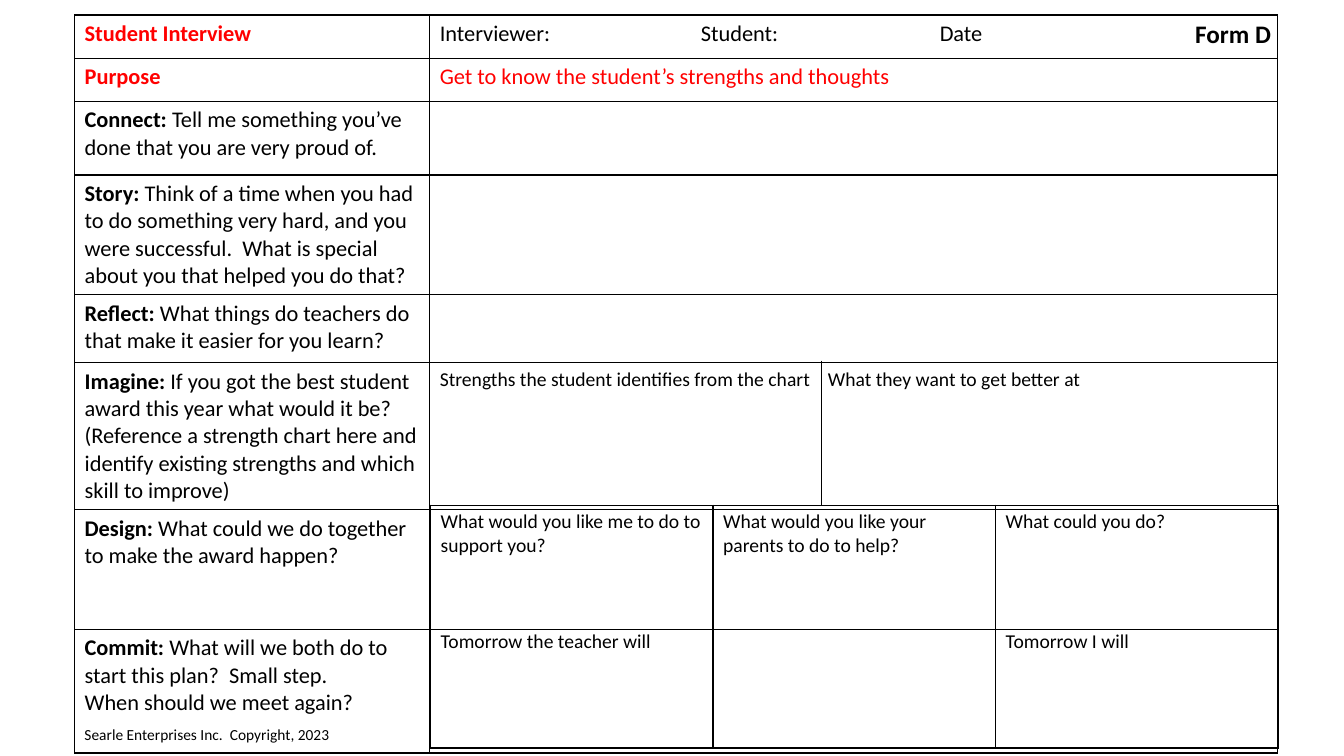
from dataclasses import dataclass

from lxml.etree import SubElement
from pptx import Presentation
from pptx.dml.color import RGBColor
from pptx.enum.shapes import MSO_CONNECTOR
from pptx.enum.text import MSO_AUTO_SIZE
from pptx.oxml.ns import qn
from pptx.slide import Slide
from pptx.table import Table, _Cell
from pptx.text.text import TextFrame
from pptx.util import Cm, Pt

COLORS = {"ink": "000000", "accent": "FF0000"}
FONT = "Calibri"
LINE_HEIGHT = 17.1  # points, one line of 14 pt text

TABLE_LEFT, TABLE_TOP = 1.88, 0.38
COLUMN_WIDTHS = [8.95, 21.36]
ANSWER_LEFT, ANSWER_TOP, ANSWER_HEIGHT = 10.85, 12.73, 6.12
DIVIDER_X, DIVIDER_TOP = 20.7, 9.09


@dataclass
class Step:
    height: float
    label: str
    question: str = ""
    closing: str = ""
    answer: str = ""
    color: str = "ink"
    answer_color: str = "ink"
    answer_size: float = 16
    tabs: tuple[float, ...] = ()


@dataclass
class Answer:
    question: str
    promise: str = ""
    lines_between: int = 0


@dataclass
class Label:
    text: str
    left: float
    top: float
    width: float
    height: float
    size: float
    bold: bool = False


STEPS = [
    Step(1.09, "Student Interview", color="accent",
         answer="Interviewer:\tStudent:\tDate", tabs=(6.58, 12.6)),
    Step(1.09, "Purpose", color="accent", answer_color="accent",
         answer="Get to know the student’s strengths and thoughts"),
    Step(1.85, "Connect: ", "Tell me something you’ve done that you are very proud of."),
    Step(3.02, "Story: ", "Think of a time when you had to do something very hard, and you "
         "were successful.  What is special about you that helped you do that?"),
    Step(1.71, "Reflect: ", "What things do teachers do that make it easier for you learn?"),
    Step(3.7, "Imagine: ", "If you got the best student award this year what would it be? "
         "(Reference a strength chart here and identify existing strengths and which "
         "skill to improve)", answer_size=14, tabs=(9.78,),
         answer="Strengths the student identifies from the chart\tWhat they want to get better at"),
    Step(3.02, "Design: ", "What could we do together to make the award happen?"),
    Step(3.11, "Commit: ", "What will we both do to start this plan?  Small step.",
         closing="When should we meet again?"),
]
ANSWERS = [
    Answer("What would you like me to do to support you?", "Tomorrow the teacher will", 3),
    Answer("What would you like your parents to do to help?"),
    Answer("What could you do?", "Tomorrow I will", 4),
]
LABELS = [
    Label("Form D", 29.87, 0.33, 2.44, 1.02, 18, bold=True),
    Label("Searle Enterprises Inc.  Copyright, 2023", 1.88, 18.14, 6.73, 0.9, 11),
]


def write(frame: TextFrame, text: str, *, size: float = 16, bold: bool = False,
          color: str = "ink", new_paragraph: bool = False, space_before: float = 0,
          tabs: tuple[float, ...] = ()) -> None:
    """Add a formatted run to the last paragraph, or to a new one."""
    paragraph = frame.add_paragraph() if new_paragraph else frame.paragraphs[-1]
    if space_before:
        paragraph.space_before = Pt(space_before)
    if tabs:
        tab_list = SubElement(paragraph._p.get_or_add_pPr(), qn("a:tabLst"))
        for position in tabs:
            SubElement(tab_list, qn("a:tab"), pos=str(Cm(position)), algn="l")
    run = paragraph.add_run()
    run.text = text
    run.font.name = FONT
    run.font.size = Pt(size)
    run.font.bold = bold
    run.font.color.rgb = RGBColor.from_string(COLORS[color])


def style_cell(cell: _Cell) -> None:
    """Give a cell thin black borders and no fill."""
    properties = cell._tc.get_or_add_tcPr()
    for side in ("lnL", "lnR", "lnT", "lnB"):
        border = SubElement(properties, qn(f"a:{side}"), w=str(Pt(1)))
        fill = SubElement(border, qn("a:solidFill"))
        SubElement(fill, qn("a:srgbClr"), val=COLORS["ink"])
    cell.fill.background()


def add_grid(slide: Slide, left: float, top: float, widths: list[float],
             heights: list[float]) -> Table:
    table = slide.shapes.add_table(len(heights), len(widths), Cm(left), Cm(top),
                                   Cm(sum(widths)), Cm(sum(heights))).table
    table.first_row = False
    table.horz_banding = False
    for column, width in zip(table.columns, widths):
        column.width = Cm(width)
    for row, height in zip(table.rows, heights):
        row.height = Cm(height)
    for cell in table.iter_cells():
        style_cell(cell)
    return table


def add_interview(slide: Slide) -> None:
    table = add_grid(slide, TABLE_LEFT, TABLE_TOP, COLUMN_WIDTHS,
                     [step.height for step in STEPS])
    for index, step in enumerate(STEPS):
        prompt = table.cell(index, 0).text_frame
        write(prompt, step.label, bold=True, color=step.color)
        if step.question:
            write(prompt, step.question)
        if step.closing:
            write(prompt, step.closing, new_paragraph=True)
        if step.answer:
            write(table.cell(index, 1).text_frame, step.answer, size=step.answer_size,
                  color=step.answer_color, tabs=step.tabs)


def add_answers(slide: Slide) -> None:
    widths = [COLUMN_WIDTHS[1] / len(ANSWERS)] * len(ANSWERS)
    table = add_grid(slide, ANSWER_LEFT, ANSWER_TOP, widths, [ANSWER_HEIGHT])
    for index, answer in enumerate(ANSWERS):
        frame = table.cell(0, index).text_frame
        write(frame, answer.question, size=14)
        if answer.promise:
            write(frame, answer.promise, size=14, new_paragraph=True,
                  space_before=answer.lines_between * LINE_HEIGHT)


def add_divider(slide: Slide) -> None:
    divider = slide.shapes.add_connector(MSO_CONNECTOR.STRAIGHT, Cm(DIVIDER_X), Cm(DIVIDER_TOP),
                                         Cm(DIVIDER_X), Cm(ANSWER_TOP))
    divider.line.color.rgb = RGBColor.from_string(COLORS["ink"])
    divider.line.width = Pt(1)
    SubElement(divider._element.spPr, qn("a:effectLst"))


def add_label(slide: Slide, label: Label) -> None:
    shape = slide.shapes.add_textbox(Cm(label.left), Cm(label.top),
                                     Cm(label.width), Cm(label.height))
    shape.text_frame.word_wrap = False
    shape.text_frame.auto_size = MSO_AUTO_SIZE.SHAPE_TO_FIT_TEXT
    write(shape.text_frame, label.text, size=label.size, bold=label.bold)


def main() -> None:
    presentation = Presentation()
    presentation.slide_width = Cm(33.87)
    presentation.slide_height = Cm(19.05)
    slide = presentation.slides.add_slide(presentation.slide_layouts[6])

    # Interview form, with the answer columns laid over its last rows
    add_interview(slide)
    add_answers(slide)
    add_divider(slide)

    # Form name and copyright line
    for label in LABELS:
        add_label(slide, label)

    presentation.save("out.pptx")


if __name__ == "__main__":
    main()
